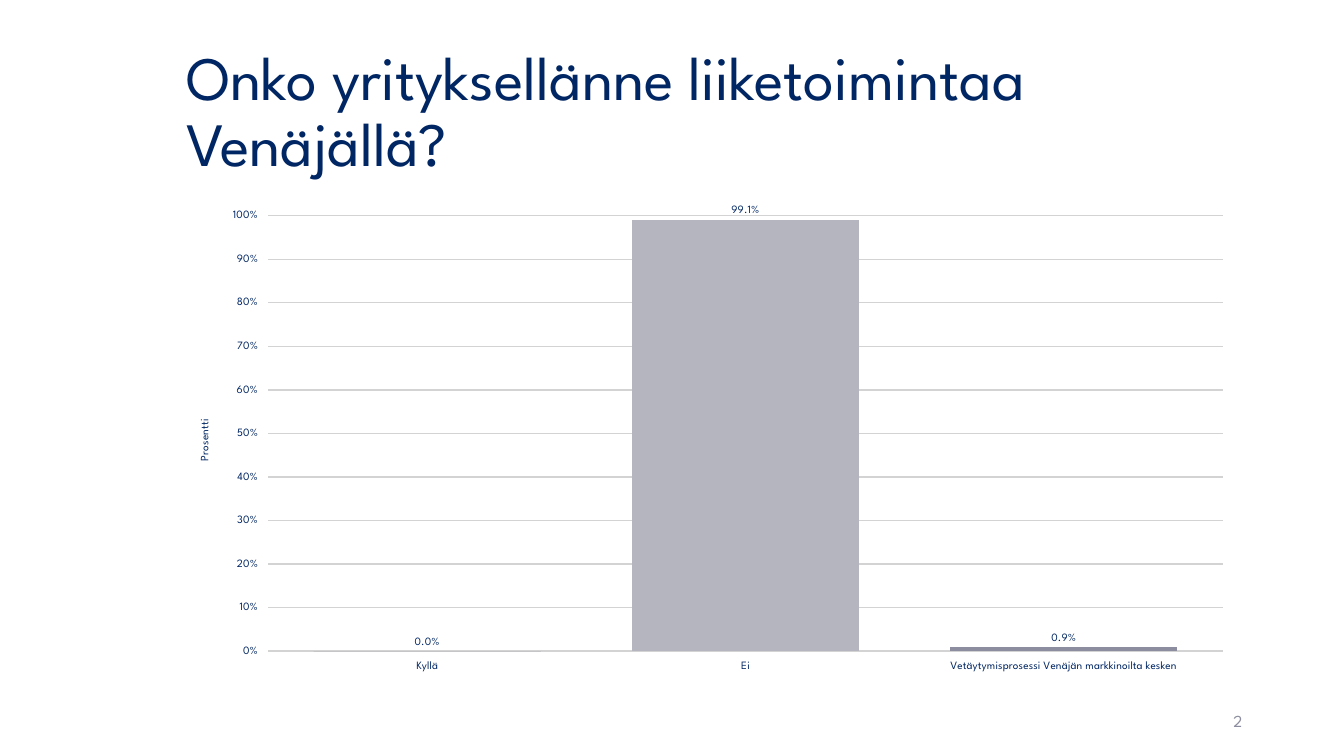
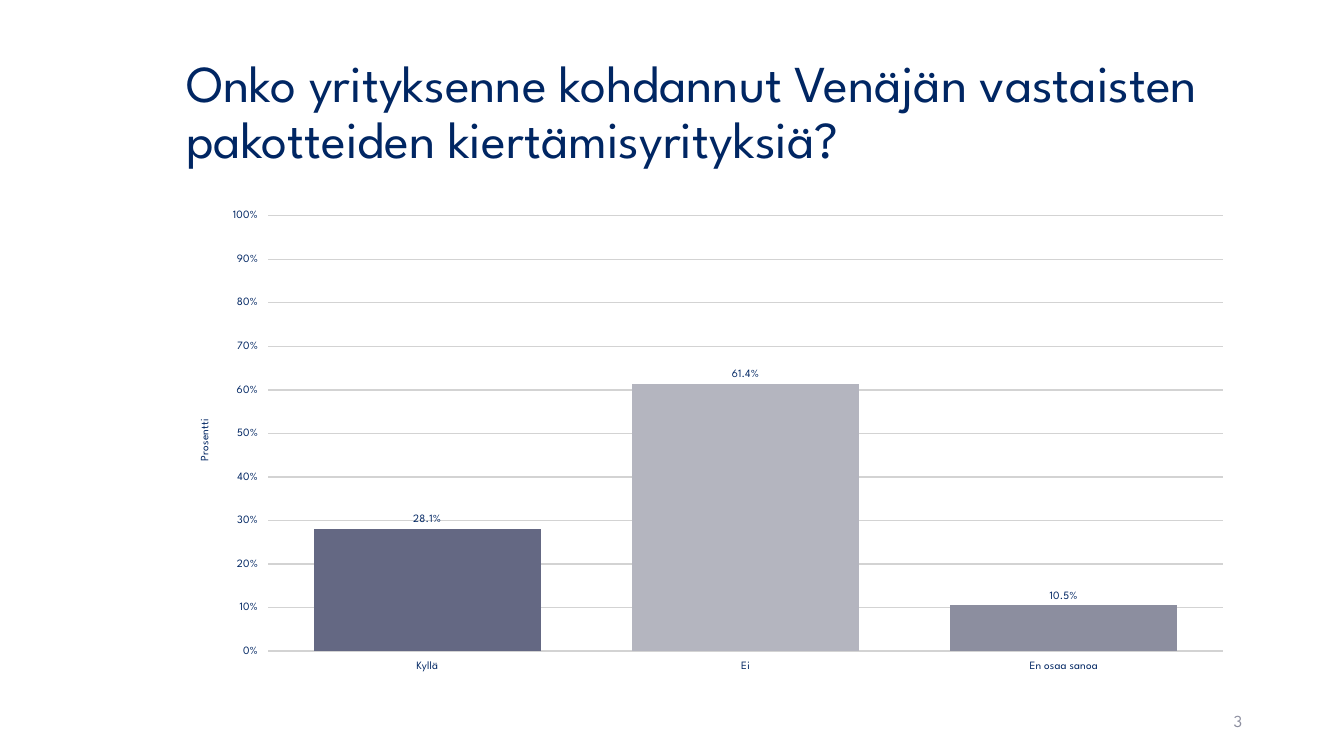
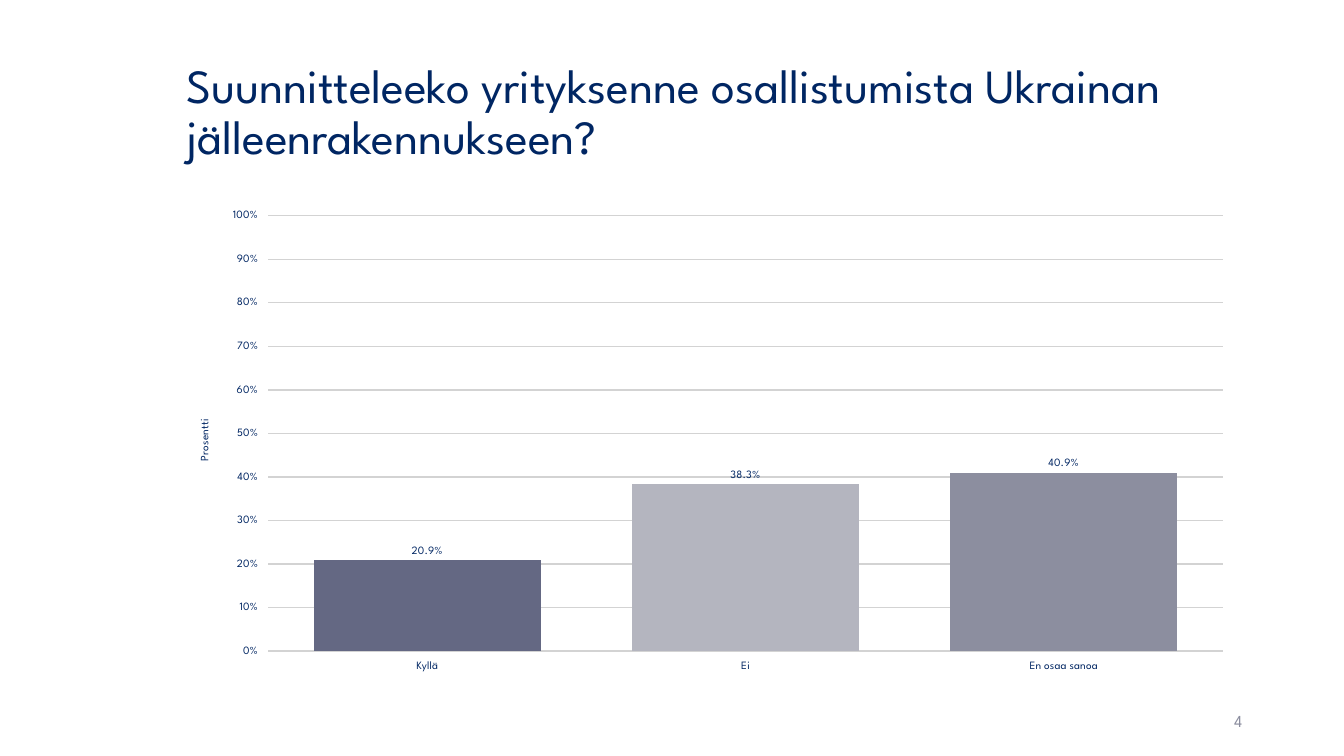
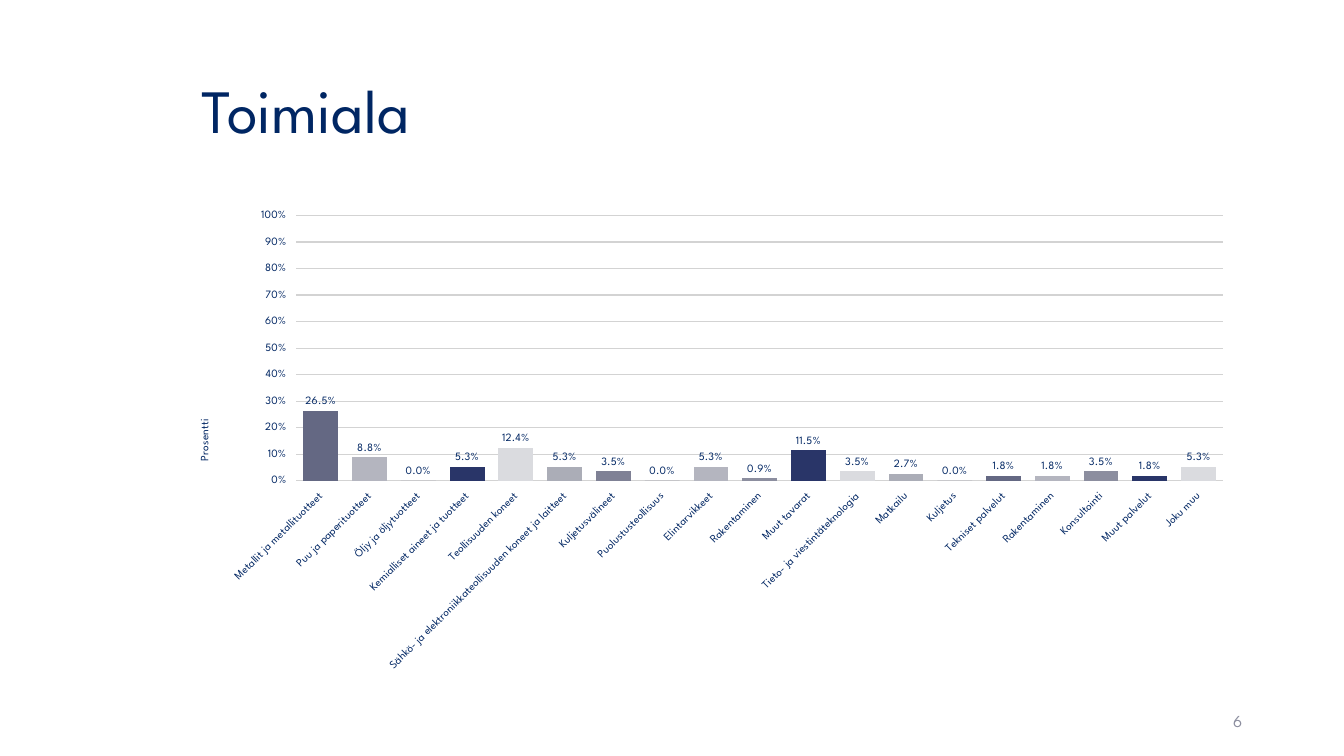
from dataclasses import dataclass
from itertools import cycle
from typing import Any

from lxml.etree import SubElement
from pptx import Presentation
from pptx.chart.data import CategoryChartData
from pptx.dml.color import RGBColor
from pptx.enum.chart import XL_CHART_TYPE as ChartType, XL_LABEL_POSITION as LabelPos
from pptx.enum.text import MSO_ANCHOR as Anchor, PP_ALIGN as Align
from pptx.oxml import parse_xml
from pptx.oxml.ns import nsdecls, qn
from pptx.util import Inches, Pt

FONT = "League Spartan"
NAVY = "002663"
GREY = "8C8E9F"
GRID = "D3D3D3"
BAR_COLOURS = ["646883", "B4B5BF", "8C8E9F", "293568", "DADBDF", "ABADB7", "7F8195"]

LEFT, WIDTH = 1.75, 10.59
CHART_TOP, CHART_HEIGHT = 2, 4.76
PLOT_TOP, PLOT_RIGHT = 2.14, 12.13
AXIS_TITLE_AT = (1.95, 4.14)


@dataclass
class Question:
    title: str
    number: int
    answers: dict[str, float] | list[tuple[str, float]]
    title_size: int = 44
    title_inset: float = 0.1
    plot_left: float = 2.66
    plot_bottom: float = 6.46
    label_angle: int = 0


QUESTIONS = [
    Question(
        "Onko yrityksellänne liiketoimintaa Venäjällä?", 2,
        [("Kyllä", 0), ("Ei", 0.991),
         ("Vetäytymisprosessi Venäjän markkinoilta kesken", 0.009)],
    ),
    Question(
        "Onko yrityksenne kohdannut Venäjän vastaisten pakotteiden kiertämisyrityksiä?", 3,
        [("Kyllä", 0.281), ("Ei", 0.614), ("En osaa sanoa", 0.105)],
        title_size=37,
    ),
    Question(
        "Suunnitteleeko yrityksenne osallistumista Ukrainan jälleenrakennukseen?", 4,
        [("Kyllä", 0.209), ("Ei", 0.383), ("En osaa sanoa", 0.409)],
        title_size=34,
    ),
    Question(
        "Toimiala", 6,
        [
            ("Metallit ja metallituotteet", 0.265),
            ("Puu ja paperituotteet", 0.088),
            ("Öljy ja öljytuotteet", 0),
            ("Kemialliset aineet ja tuotteet", 0.053),
            ("Teollisuuden koneet", 0.124),
            ("Sähkö- ja elektroniikkateollisuuden koneet ja laitteet", 0.053),
            ("Kuljetusvälineet", 0.035),
            ("Puolustusteollisuus", 0),
            ("Elintarvikkeet", 0.053),
            ("Rakentaminen", 0.009),
            ("Muut tavarat", 0.115),
            ("Tieto- ja viestintäteknologia", 0.035),
            ("Matkailu", 0.027),
            ("Kuljetus", 0),
            ("Tekniset palvelut", 0.018),
            ("Rakentaminen", 0.018),
            ("Konsultointi", 0.035),
            ("Muut palvelut", 0.018),
            ("Joku muu", 0.053),
        ],
        title_inset=0.25, plot_left=2.94, plot_bottom=4.77, label_angle=-45,
    ),
]


def rgb(colour: str) -> RGBColor:
    return RGBColor.from_string(colour)


def set_all(target: Any, values: dict[str, Any]) -> None:
    for name, value in values.items():
        setattr(target, name, value)


def style_font(font: Any, size: int, colour: str = NAVY) -> None:
    set_all(font, {"name": FONT, "size": Pt(size), "bold": False})
    font.color.rgb = rgb(colour)


def add_text(s: Any, text: str, box: tuple[float, ...], size: int, colour: str,
             paragraph: dict[str, Any], inset: float = 0.1) -> None:
    tf = s.shapes.add_textbox(*map(Inches, box)).text_frame
    set_all(tf, {"word_wrap": True, "vertical_anchor": Anchor.MIDDLE,
                 "margin_left": Inches(inset)})
    p = tf.paragraphs[0]
    set_all(p, paragraph)
    r = p.add_run()
    r.text = text
    style_font(r.font, size, colour)


def place(parent: Any, index: int, left: float, top: float,
          size: tuple[float, float] | None = None) -> None:
    """Fix a chart part at slide coordinates in inches; size is for the plot area."""
    for old in parent.findall(qn("c:layout")):
        parent.remove(old)
    layout = parse_xml(f"<c:layout {nsdecls('c')}><c:manualLayout/></c:layout>")
    values = {"xMode": "edge", "yMode": "edge",
              "x": (left - LEFT) / WIDTH, "y": (top - CHART_TOP) / CHART_HEIGHT}
    if size:
        values = {"layoutTarget": "inner", **values,
                  "w": size[0] / WIDTH, "h": size[1] / CHART_HEIGHT}
    for name, value in values.items():
        SubElement(layout[0], qn(f"c:{name}")).set("val", str(value))
    parent.insert(index, layout)


def style_axes(chart: Any, label_angle: int) -> None:
    for axis in (chart.category_axis, chart.value_axis):
        style_font(axis.tick_labels.font, 8)
        axis.format.line.fill.background()
    if label_angle:
        body = chart.category_axis._element.find(qn("c:txPr")).find(qn("a:bodyPr"))
        body.set("rot", str(label_angle * 60000))

    axis = chart.value_axis
    set_all(axis, {"minimum_scale": 0, "maximum_scale": 1, "major_unit": 0.1,
                   "has_major_gridlines": True})
    set_all(axis.tick_labels, {"number_format": "0%", "number_format_is_linked": False})
    line = axis.major_gridlines.format.line
    line.color.rgb = rgb(GRID)
    line.width = Pt(1)

    tf = axis.axis_title.text_frame
    tf.text = "Prosentti"
    style_font(tf.paragraphs[0].runs[0].font, 8)
    set_all_xml = {"rot": "-5400000", "vert": "horz"}
    for name, value in set_all_xml.items():
        tf._txBody.find(qn("a:bodyPr")).set(name, value)
    place(axis.axis_title._element, 1, *AXIS_TITLE_AT)


def add_column_chart(s: Any, q: Question) -> None:
    data = CategoryChartData(number_format="0.0%")
    data.categories = [name for name, _ in q.answers]
    data.add_series("Series 1", [share for _, share in q.answers])
    box = map(Inches, (LEFT, CHART_TOP, WIDTH, CHART_HEIGHT))
    chart = s.shapes.add_chart(ChartType.COLUMN_CLUSTERED, *box, data).chart
    set_all(chart, {"has_title": False, "has_legend": False})
    style_font(chart.font, 18)
    style_axes(chart, q.label_angle)

    plot = chart.plots[0]
    set_all(plot, {"gap_width": 40, "overlap": -2, "vary_by_categories": False,
                   "has_data_labels": True})
    set_all(plot.data_labels, {"show_value": True, "number_format": "0.0%",
                               "number_format_is_linked": False,
                               "position": LabelPos.OUTSIDE_END})
    style_font(plot.data_labels.font, 8)
    for i, colour in zip(range(len(q.answers)), cycle(BAR_COLOURS)):
        fill = plot.series[0].points[i].format.fill
        fill.solid()
        fill.fore_color.rgb = rgb(colour)

    place(chart._chartSpace.chart.plotArea, 0, q.plot_left, PLOT_TOP,
          (PLOT_RIGHT - q.plot_left, q.plot_bottom - PLOT_TOP))


def add_question(prs: Any, q: Question) -> None:
    s = prs.slides.add_slide(prs.slide_layouts[6])
    add_text(s, q.title, (LEFT, 0.4, WIDTH, 1.45), q.title_size, NAVY,
             {"line_spacing": 0.9}, q.title_inset)
    add_text(s, str(q.number), (9.42, 6.95, 3, 0.4), 12, GREY,
             {"alignment": Align.RIGHT, "space_after": Pt(6)})
    add_column_chart(s, q)


def main() -> None:
    prs = Presentation()
    set_all(prs, {"slide_width": Inches(13.33), "slide_height": Inches(7.5)})
    for q in QUESTIONS:
        add_question(prs, q)
    prs.save("out.pptx")


if __name__ == "__main__":
    main()
